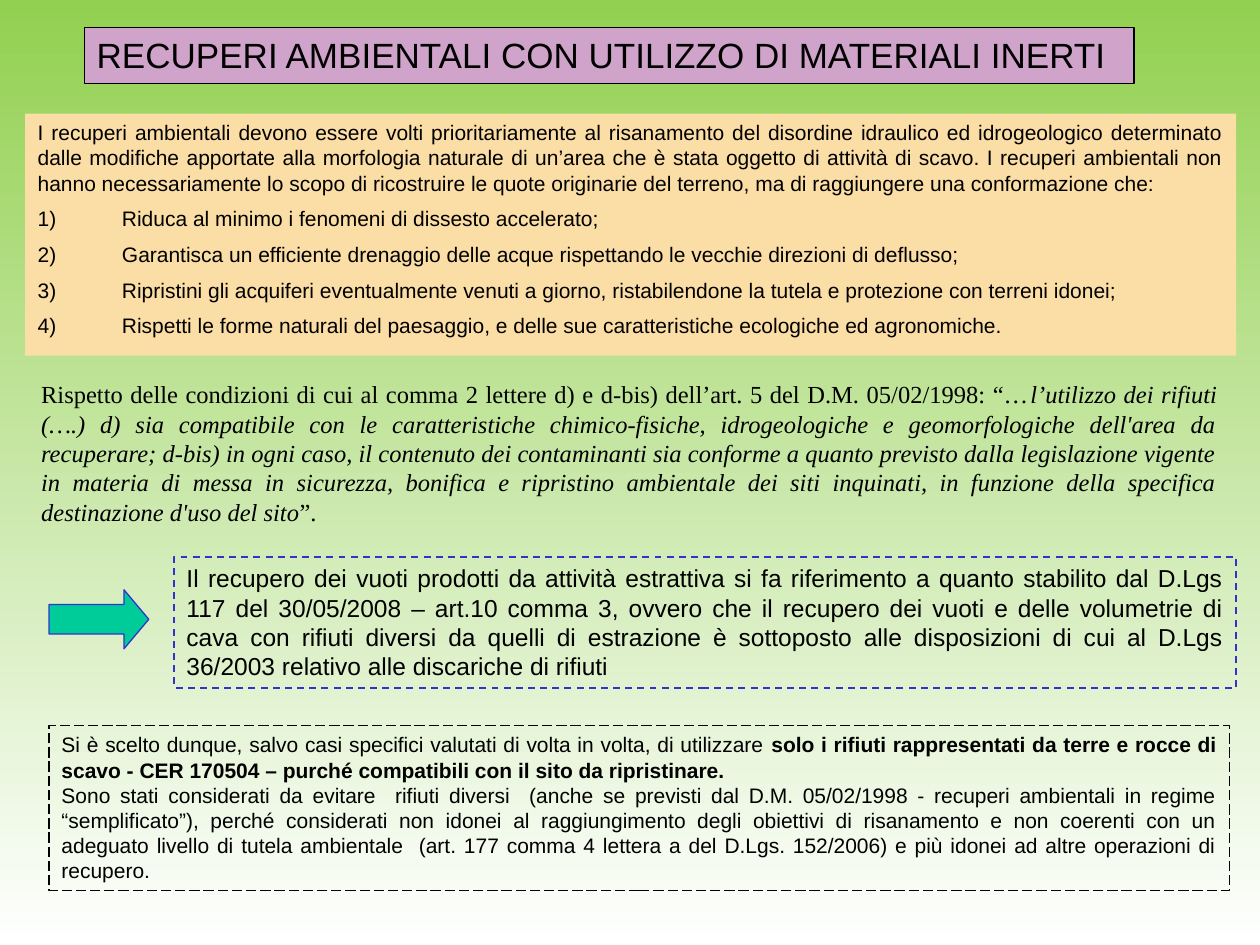
from pptx import Presentation
from pptx.dml.color import RGBColor
from pptx.enum.dml import MSO_LINE
from pptx.enum.shapes import MSO_SHAPE
from pptx.enum.text import PP_ALIGN
from pptx.oxml.xmlchemy import OxmlElement
from pptx.util import Cm, Pt

BLACK = RGBColor(0x00, 0x00, 0x00)
WHITE = RGBColor(0xFF, 0xFF, 0xFF)
GREEN = RGBColor(0x92, 0xD0, 0x50)
MAUVE = RGBColor(0xD0, 0xA3, 0xCB)
PEACH = RGBColor(0xFB, 0xDD, 0xA6)
TEAL = RGBColor(0x00, 0xCC, 0x99)
BLUE = RGBColor(0x33, 0x33, 0xCC)

prs = Presentation()
prs.slide_width, prs.slide_height = Cm(25.4), Cm(19.05)
s = prs.slides.add_slide(prs.slide_layouts[6])

bg = s.background.fill
bg.gradient()
bg.gradient_angle = 270
for stop, color in zip(bg.gradient_stops, (GREEN, WHITE)):
    stop.color.rgb = color


def add_text(paragraphs, box, size, font="Arial", align=PP_ALIGN.JUSTIFY,
             fill=None, line=None, width=0.75, dash=None, before=0):
    sp = s.shapes.add_textbox(*[Cm(v) for v in box])
    if fill is not None:
        sp.fill.solid()
        sp.fill.fore_color.rgb = fill
    if line is not None:
        sp.line.color.rgb = line
        sp.line.width = Pt(width)
        sp.line.dash_style = dash
    tf = sp.text_frame
    tf.word_wrap = True
    for i, runs in enumerate(paragraphs):
        p = tf.add_paragraph() if i else tf.paragraphs[0]
        p.alignment = align
        p.space_before = Pt(before if i else 0)
        for text, style in runs:
            r = p.add_run()
            r.text = text
            r.font.name = font
            r.font.size = Pt(size)
            r.font.color.rgb = BLACK
            r.font.bold = style == "bold"
            r.font.italic = style == "italic"
    return tf


add_text([[("RECUPERI AMBIENTALI CON UTILIZZO DI MATERIALI INERTI", "")]],
         (1.7, 0.56, 21.16, 1.12), 20, align=PP_ALIGN.LEFT, fill=MAUVE, line=BLACK)

goals = [
    "I recuperi ambientali devono essere volti prioritariamente al risanamento del "
    "disordine idraulico ed idrogeologico determinato dalle modifiche apportate alla "
    "morfologia naturale di un’area che è stata oggetto di attività di scavo. I recuperi "
    "ambientali non hanno necessariamente lo scopo di ricostruire le quote originarie del "
    "terreno, ma di raggiungere una conformazione che:",
    "Riduca al minimo i fenomeni di dissesto accelerato;",
    "Garantisca un efficiente drenaggio delle acque rispettando le vecchie direzioni di deflusso;",
    "Ripristini gli acquiferi eventualmente venuti a giorno, ristabilendone la tutela e "
    "protezione con terreni idonei;",
    "Rispetti le forme naturali del paesaggio, e delle sue caratteristiche ecologiche ed agronomiche.",
]
tf = add_text([[(text, "")] for text in goals], (0.51, 2.29, 24.41, 4.88), 12,
              fill=PEACH, before=6)
for p in tf.paragraphs[1:]:
    pPr = p._p.get_or_add_pPr()
    pPr.set("marL", str(Cm(1.7)))
    pPr.set("indent", str(-Cm(1.7)))
    number = OxmlElement("a:buAutoNum")
    number.set("type", "arabicParenR")
    pPr.append(number)

add_text([[
    ("Il recupero dei vuoti prodotti da attività estrattiva si fa riferimento a quanto "
     "stabilito dal D.Lgs 117 del 30/05/2008 – art.10 comma 3, ovvero che il recupero dei "
     "vuoti e delle volumetrie di cava con rifiuti diversi da quelli di estrazione è "
     "sottoposto alle disposizioni di cui al D.Lgs 36/2003 relativo alle discariche di rifiuti", ""),
]], (3.51, 11.23, 21.41, 2.64), 14, line=BLUE, width=1, dash=MSO_LINE.DASH)

arrow = s.shapes.add_shape(MSO_SHAPE.RIGHT_ARROW, Cm(0.99), Cm(11.89), Cm(2.01), Cm(1.19))
arrow.shadow.inherit = False
arrow.adjustments[0] = 0.5
arrow.adjustments[1] = 0.42
arrow.fill.solid()
arrow.fill.fore_color.rgb = TEAL
arrow.line.color.rgb = BLUE
arrow.line.width = Pt(0.75)

add_text([[
    ("Rispetto delle condizioni di cui al comma 2 lettere d) e d-bis) dell’art. 5 del "
     "D.M. 05/02/1998: “…", ""),
    ("l’utilizzo dei rifiuti (….) d) sia compatibile con le caratteristiche "
     "chimico-fisiche, idrogeologiche e geomorfologiche dell'area da recuperare; d-bis) in "
     "ogni caso, il contenuto dei contaminanti sia conforme a quanto previsto dalla "
     "legislazione vigente in materia di messa in sicurezza, bonifica e ripristino "
     "ambientale dei siti inquinati, in funzione della specifica destinazione d'uso del sito",
     "italic"),
    ("”.", ""),
]], (0.58, 7.52, 24.21, 3.35), 14, font="Times New Roman")

add_text([
    [("Si è scelto dunque, salvo casi specifici valutati di volta in volta, di utilizzare ", ""),
     ("solo i rifiuti rappresentati da terre e rocce di scavo - CER 170504 – purché "
      "compatibili con il sito da ripristinare.", "bold")],
    [("Sono stati considerati da evitare  rifiuti diversi  (anche se previsti dal D.M. "
      "05/02/1998 - recuperi ambientali in regime “semplificato”), perché considerati non "
      "idonei al raggiungimento degli obiettivi di risanamento e non coerenti con un adeguato "
      "livello di tutela ambientale  (art. 177 comma 4 lettera a del D.Lgs. 152/2006) e più "
      "idonei ad altre operazioni di recupero.", "")],
], (0.99, 14.63, 23.8, 3.33), 12, line=BLACK, dash=MSO_LINE.LONG_DASH)

prs.save("out.pptx")
